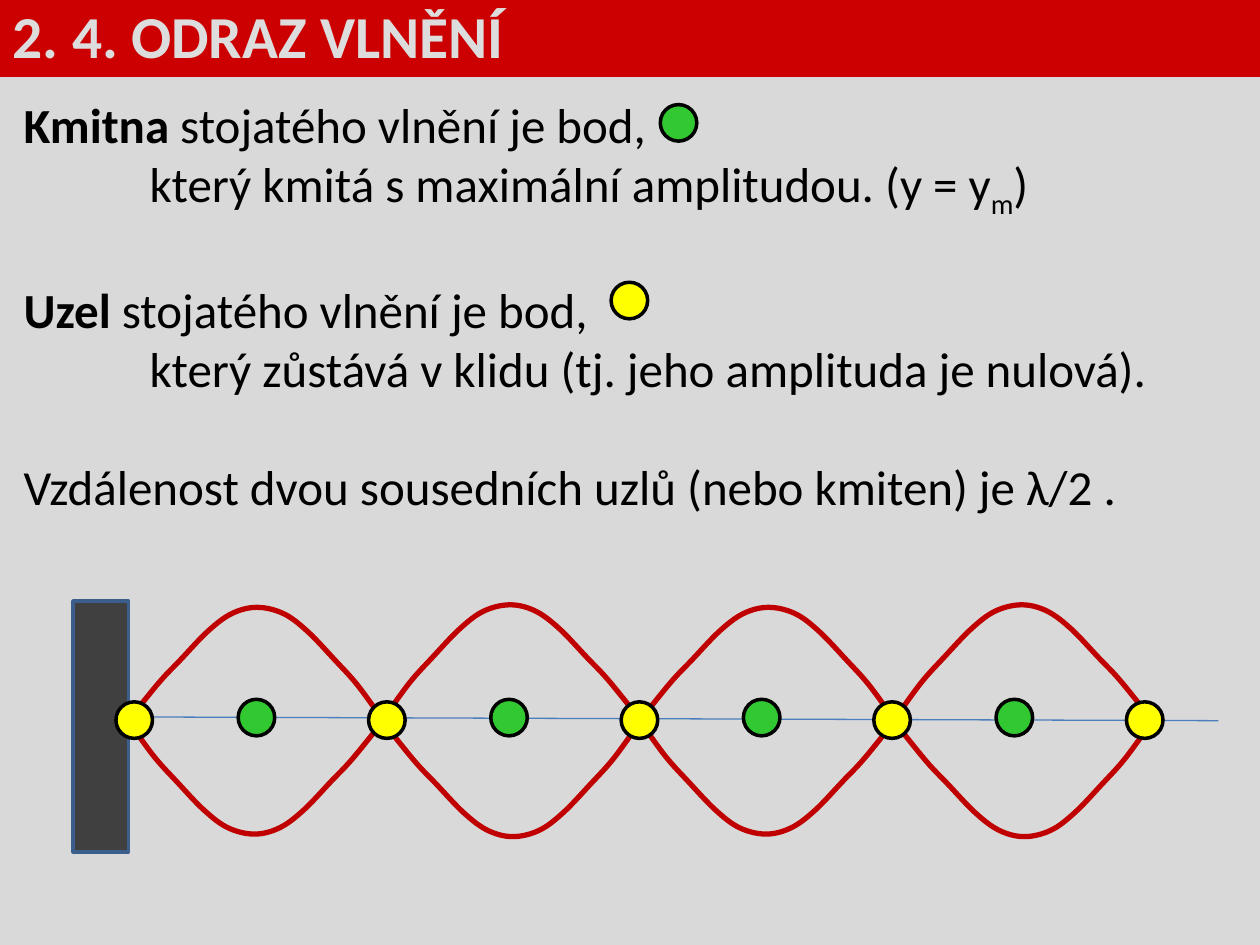
from lxml import etree
from pptx import Presentation
from pptx.dml.color import RGBColor
from pptx.enum import shapes, text
from pptx.oxml import ns
from pptx.util import Inches, Pt

GREY = RGBColor(0xD9, 0xD9, 0xD9)
BANNER_RED = RGBColor(0xCC, 0x00, 0x00)
TITLE_GREY = RGBColor(0xDD, 0xDD, 0xDD)
WAVE_RED = RGBColor(0xC0, 0x00, 0x00)
WALL_GREY = RGBColor(0x40, 0x40, 0x40)
WALL_EDGE = RGBColor(0x3A, 0x5F, 0x8C)
AXIS_BLUE = RGBColor(0x4B, 0x7E, 0xBC)
YELLOW = RGBColor(0xFF, 0xFF, 0x00)
GREEN = RGBColor(0x32, 0xC8, 0x32)
BLACK = RGBColor(0, 0, 0)

FONT = "Calibri"
DOT = 0.29
LOBES = 4
DOT_STEP = 2.005
LOBE_STEP = 2.03
# One half-wave: distance along the axis, deflection
PROFILE = [(0, 0), (0.21, 0.29), (0.39, 0.49), (0.61, 0.72), (0.8, 0.86),
           (1.01, 0.91), (1.21, 0.86), (1.4, 0.72), (1.62, 0.49),
           (1.79, 0.31), (2.04, 0)]


def add_run(paragraph, words, size=28, color=BLACK, bold=False, baseline=None):
    run = paragraph.add_run()
    run.text = words
    font = run.font
    font.name, font.size, font.bold = FONT, Pt(size), bold
    font.color.rgb = color
    if baseline is not None:
        run._r.get_or_add_rPr().set("baseline", str(baseline))


def style(shape, fill, line, width):
    shape.shadow.inherit = False
    if fill is None:
        shape.fill.background()
    else:
        shape.fill.solid()
        shape.fill.fore_color.rgb = fill
    shape.line.color.rgb = line
    shape.line.width = Pt(width)


def add_dot(slide, left, top, fill):
    dot = slide.shapes.add_shape(shapes.MSO_SHAPE.OVAL, Inches(left),
                                 Inches(top), Inches(DOT), Inches(DOT))
    style(dot, fill, BLACK, 2)


def round_off(outline):
    """Turn the straight segments of a freeform into Catmull-Rom curves."""
    nodes = [(int(pt.get("x")), int(pt.get("y")))
             for pt in outline._element.iter(ns.qn("a:pt"))]
    padded = [nodes[0], *nodes, nodes[-1]]
    segments = list(outline._element.iter(ns.qn("a:lnTo")))
    for segment, a, b, c, d in zip(segments, padded, padded[1:],
                                   padded[2:], padded[3:]):
        curve = etree.Element(ns.qn("a:cubicBezTo"))
        leaving = [q + (r - p) / 6 for p, q, r in zip(a, b, c)]
        arriving = [q - (r - p) / 6 for p, q, r in zip(b, c, d)]
        for x, y in (leaving, arriving, c):
            etree.SubElement(curve, ns.qn("a:pt"), x=str(round(x)), y=str(round(y)))
        segment.getparent().replace(segment, curve)


def add_banner(slide, left, top, width, height):
    title = slide.shapes.title
    title.left, title.top = Inches(left), Inches(top)
    title.width, title.height = Inches(width), Inches(height)
    title.fill.solid()
    title.fill.fore_color.rgb = BANNER_RED
    frame = title.text_frame
    frame.auto_size = text.MSO_AUTO_SIZE.NONE
    frame.vertical_anchor = text.MSO_ANCHOR.MIDDLE
    heading = frame.paragraphs[0]
    heading.alignment = text.PP_ALIGN.LEFT
    add_run(heading, "2. 4. ODRAZ VLNĚNÍ", size=34, color=TITLE_GREY, bold=True)


def add_definitions(slide, left, top, width, height):
    box = slide.shapes.add_textbox(Inches(left), Inches(top),
                                   Inches(width), Inches(height))
    frame = box.text_frame
    frame.word_wrap = True
    antinode, node, distance = (frame.paragraphs[0], frame.add_paragraph(),
                                frame.add_paragraph())
    for paragraph in (antinode, node):
        paragraph.space_after = Pt(34)
        tabs = etree.SubElement(paragraph._p.get_or_add_pPr(), ns.qn("a:tabLst"))
        etree.SubElement(tabs, ns.qn("a:tab"), pos=str(Inches(1)), algn="l")

    add_run(antinode, "Kmitna", bold=True)
    add_run(antinode, " stojatého vlnění je bod, ")
    antinode.add_line_break()
    add_run(antinode, "\tkterý kmitá s maximální amplitudou. (y = y")
    add_run(antinode, "m", baseline=-25000)
    add_run(antinode, ")")

    add_run(node, "Uzel", bold=True)
    add_run(node, " stojatého vlnění je bod, ")
    node.add_line_break()
    add_run(node, "\tkterý zůstává v klidu (tj. jeho amplituda je nulová).")

    add_run(distance, "Vzdálenost dvou sousedních uzlů (nebo kmiten) je λ/2 .")

    add_dot(slide, left + 5.15, top + 0.13, GREEN)
    add_dot(slide, left + 4.76, top + 1.54, YELLOW)


def add_lobe(group, left, axis, direction, mirrored):
    """Draw a half-wave; direction is -1 above the axis and 1 below it."""
    span = PROFILE[-1][0]
    points = [(Inches(left + (span - x if mirrored else x)),
               Inches(axis + direction * y)) for x, y in PROFILE]
    builder = group.shapes.build_freeform(*points[0])
    builder.add_line_segments(points[1:], close=False)
    lobe = builder.convert_to_shape()
    round_off(lobe)
    style(lobe, None, WAVE_RED, 3)


def add_lobes(slide, left, axis, mirrored):
    """Draw one of the two opposite extremes of the wave."""
    group = slide.shapes.add_group_shape()
    for i in range(LOBES):
        below = (i % 2 == 0) != mirrored
        add_lobe(group, left + i * LOBE_STEP, axis, 1 if below else -1, mirrored)


def add_wave(slide, left, top, width, height):
    """Draw the standing wave at a wall that fills the left of the box."""
    wall_width = 0.44
    start = left + wall_width - 0.01

    add_lobes(slide, start, top + 0.96, mirrored=True)
    wall = slide.shapes.add_shape(shapes.MSO_SHAPE.RECTANGLE, Inches(left),
                                  Inches(top), Inches(wall_width), Inches(height))
    style(wall, WALL_GREY, WALL_EDGE, 2)

    rest = slide.shapes.add_connector(
        shapes.MSO_CONNECTOR.STRAIGHT, Inches(start), Inches(top + 0.92),
        Inches(left + width), Inches(top + 0.95))
    rest.line.color.rgb = AXIS_BLUE
    rest.line.width = Pt(0.75)
    etree.SubElement(rest._element.spPr, ns.qn("a:effectLst"))
    add_lobes(slide, start, top + 0.94, mirrored=False)

    for i in range(LOBES + 1):
        add_dot(slide, left + 0.34 + i * DOT_STEP, top + 0.8, YELLOW)
    for i in range(LOBES):
        add_dot(slide, left + 1.31 + i * DOT_STEP, top + 0.78, GREEN)


def main():
    deck = Presentation()
    deck.slide_width, deck.slide_height = Inches(10), Inches(7.5)
    slide = deck.slides.add_slide(deck.slide_layouts[5])
    slide.background.fill.solid()
    slide.background.fill.fore_color.rgb = GREY
    add_banner(slide, 0, -0.06, 10, 0.67)
    add_definitions(slide, 0.09, 0.7, 10.16, 3.87)
    add_wave(slide, 0.58, 4.77, 9.09, 1.99)
    deck.save("out.pptx")


if __name__ == "__main__":
    main()
